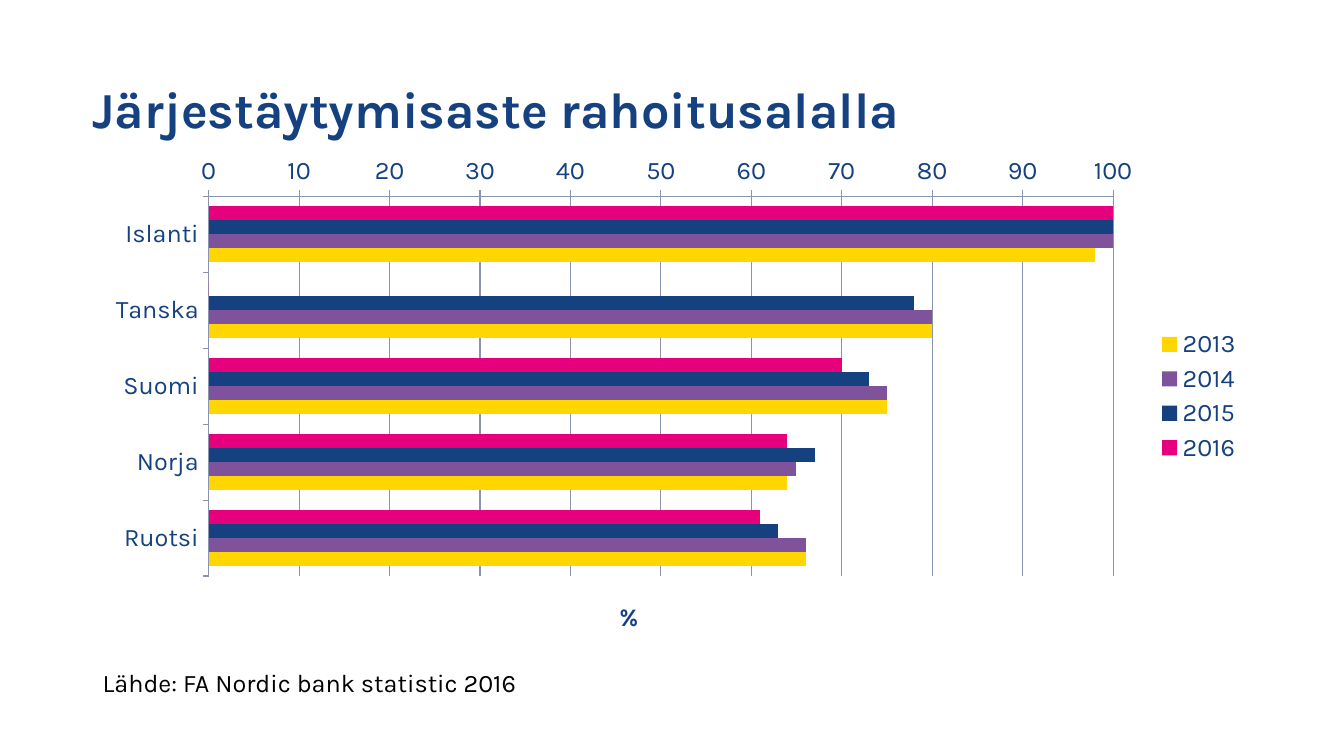
from dataclasses import dataclass

from lxml.etree import SubElement
from pptx import Presentation
from pptx.chart.chart import Chart
from pptx.chart.data import CategoryChartData
from pptx.dml.color import RGBColor
from pptx.enum.chart import XL_CHART_TYPE, XL_LEGEND_POSITION, XL_TICK_MARK
from pptx.enum.text import MSO_ANCHOR
from pptx.oxml.ns import qn
from pptx.slide import Slide
from pptx.util import Inches, Pt

FONT = "Karla"
NAVY = RGBColor(0x16, 0x41, 0x80)
PINK = RGBColor(0xE6, 0x00, 0x7E)
PURPLE = RGBColor(0x7F, 0x53, 0x9C)
YELLOW = RGBColor(0xFF, 0xD6, 0x00)
BLACK = RGBColor(0x00, 0x00, 0x00)
AXIS_GREY = RGBColor(0x8A, 0x93, 0xB0)

COUNTRIES = ["Islanti", "Tanska", "Suomi", "Norja", "Ruotsi"]


@dataclass
class YearSeries:
    year: str
    values: list[float]
    color: RGBColor


@dataclass
class TextItem:
    text: str
    left: float
    top: float
    width: float
    height: float
    size: int
    color: RGBColor
    bold: bool = False
    anchor: MSO_ANCHOR = MSO_ANCHOR.TOP
    line_spacing: float = 1.0


YEARS = [
    YearSeries("2016", [100, 0, 70, 64, 61], PINK),
    YearSeries("2015", [100, 78, 73, 67, 63], NAVY),
    YearSeries("2014", [100, 80, 75, 65, 66], PURPLE),
    YearSeries("2013", [98, 80, 75, 64, 66], YELLOW),
]

TEXTS = [
    TextItem("Järjestäytymisaste rahoitusalalla", 0.82, 0.39, 11.5, 1.45, 36, NAVY,
             True, MSO_ANCHOR.MIDDLE, 0.9),
    TextItem("Lähde: FA Nordic bank statistic 2016", 0.92, 6.57, 6.21, 0.4, 18, BLACK),
]


def add_text(slide: Slide, item: TextItem) -> None:
    box = slide.shapes.add_textbox(Inches(item.left), Inches(item.top),
                                   Inches(item.width), Inches(item.height))
    frame = box.text_frame
    frame.word_wrap = True
    frame.vertical_anchor = item.anchor
    paragraph = frame.paragraphs[0]
    paragraph.line_spacing = item.line_spacing
    run = paragraph.add_run()
    run.text = item.text
    run.font.name = FONT
    run.font.size = Pt(item.size)
    run.font.bold = item.bold
    run.font.color.rgb = item.color


def set_manual_layout(parent, index: int, **settings: str | float) -> None:
    """Place a chart part by fractions of the chart area."""
    for old_layout in parent.findall(qn("c:layout")):
        parent.remove(old_layout)
    layout = SubElement(parent, qn("c:layout"))
    parent.insert(index, layout)
    manual = SubElement(layout, qn("c:manualLayout"))
    for name, value in settings.items():
        SubElement(manual, qn(f"c:{name}")).set("val", str(value))


def style_axes(chart: Chart) -> None:
    country_axis, percent_axis = chart.category_axis, chart.value_axis
    for axis in (country_axis, percent_axis):
        axis.major_tick_mark = XL_TICK_MARK.OUTSIDE
        axis.minor_tick_mark = XL_TICK_MARK.NONE
        axis.format.line.color.rgb = AXIS_GREY
        axis.format.line.width = Pt(0.75)
    country_axis.reverse_order = True

    percent_axis.minimum_scale = 0
    percent_axis.maximum_scale = 100
    percent_axis.major_unit = 10
    percent_axis.has_major_gridlines = True
    gridline = percent_axis.major_gridlines.format.line
    gridline.color.rgb = AXIS_GREY
    gridline.width = Pt(0.75)

    title = percent_axis.axis_title
    run = title.text_frame.paragraphs[0].add_run()
    run.text = "%"
    run.font.name = FONT
    run.font.size = Pt(18)
    run.font.bold = True
    run.font.color.rgb = NAVY
    set_manual_layout(title._element, 1, xMode="edge", yMode="edge", x=0.45, y=0.9)


def add_bar_chart(slide: Slide) -> None:
    data = CategoryChartData()
    data.categories = COUNTRIES
    for entry in YEARS:
        data.add_series(entry.year, entry.values)
    chart = slide.shapes.add_chart(XL_CHART_TYPE.BAR_CLUSTERED, Inches(0.92), Inches(1.45),
                                   Inches(11.5), Inches(4.96), data).chart
    chart.has_title = False
    chart.font.name = FONT
    chart.font.size = Pt(18)
    chart.font.color.rgb = NAVY

    plot = chart.plots[0]
    plot.gap_width = 150
    plot.overlap = 0
    plot.vary_by_categories = False
    for series, entry in zip(plot.series, YEARS):
        series.format.fill.solid()
        series.format.fill.fore_color.rgb = entry.color

    style_axes(chart)
    chart.has_legend = True
    chart.legend.position = XL_LEGEND_POSITION.RIGHT
    chart.legend.include_in_layout = False
    plot_area = chart._chartSpace.chart.plotArea
    set_manual_layout(plot_area, 0, layoutTarget="inner", xMode="edge", yMode="edge",
                      x=0.1, y=0.1, w=0.78, h=0.76)


def main() -> None:
    presentation = Presentation()
    presentation.slide_width = Inches(13.33)
    presentation.slide_height = Inches(7.5)
    slide = presentation.slides.add_slide(presentation.slide_layouts[6])
    add_bar_chart(slide)
    for item in TEXTS:
        add_text(slide, item)
    presentation.save("out.pptx")


if __name__ == "__main__":
    main()
